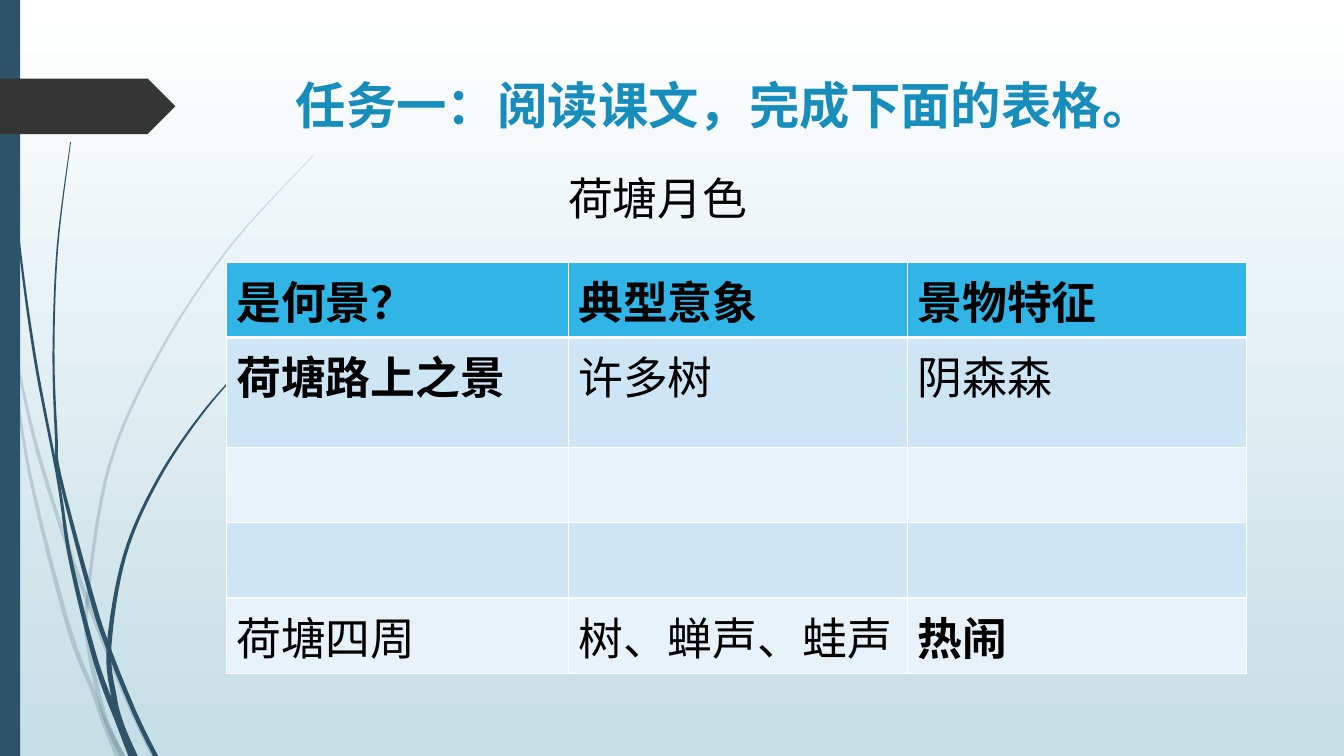
from itertools import pairwise

from lxml import etree
from pptx import Presentation
from pptx import util as u
from pptx.dml.color import RGBColor
from pptx.enum import shapes, text
from pptx.oxml import ns

FONT = "Noto Sans CJK SC"
COLOURS = {
    "white": "FFFFFF",
    "mist": "C5DEE5",
    "navy": "2E5369",
    "charcoal": "353535",
    "title": "178DBB",
    "header": "31B4E6",
    "band": "CEE5F5",
    "pale": "E8F2FA",
    "black": "000000",
}


def colour(name):
    return RGBColor.from_string(COLOURS[name])


def style(para, size, name, bold):
    font = para.font
    font.size = u.Pt(size)
    font.bold = bold
    font.color.rgb = colour(name)
    font.name = FONT
    etree.SubElement(font._element, ns.qn("a:ea"), typeface=FONT)


deck = Presentation()
deck.slide_width = u.Cm(33.87)
deck.slide_height = u.Cm(19.05)
page = deck.slides.add_slide(deck.slide_layouts[5])

backdrop = page.background.fill
backdrop.gradient()
backdrop.gradient_angle = 270
for stop, name, position in zip(backdrop.gradient_stops, ("white", "mist"), (0, 1)):
    stop.color.rgb = colour(name)
    stop.position = position

STEPS = 8
stems = [
    (20, (1, 5), [
        (0, 7.35, 0.05), (0.29, 8.89, 0.05), (0.75, 11.94, 0.08),
        (1.71, 15.75, 0.12), (2.34, 17.4, 0.12), (2.61, 18.14, 0.15),
        (3.02, 19.05, 0.25)]),
    (20, (3,), [
        (0.36, 8.76, 0.05), (0.85, 11, 0.09), (1.52, 13.23, 0.1),
        (2.22, 15.18, 0.12), (3.18, 17.6, 0.1), (3.87, 19.05, 0.13)]),
    (20, (4, 6), [
        (7.92, 3.89, 0.02), (5.8, 6.21, 0.05), (4.04, 8.85, 0.07),
        (2.76, 11.72, 0.08), (2.2, 15.14, 0.09), (2.26, 16.41, 0.12),
        (2.64, 18.06, 0.12), (3.09, 19.05, 0.15)]),
    (100, (4, 7), [
        (0.09, 0, 0.02), (0.19, 2.79, 0.03), (0.46, 5.92, 0.05),
        (0.88, 9.02, 0.07), (1.47, 12.12, 0.07), (1.78, 14.12, 0.1),
        (2.43, 16.71, 0.13), (3.05, 18.34, 0.17), (3.35, 19.05, 0.23)]),
    (100, (4, 6), [
        (1.78, 3.58, 0.02), (1.45, 6.22, 0.04), (1.35, 8.86, 0.05),
        (1.42, 11, 0.07), (1.51, 11.99, 0.08), (2.3, 15.01, 0.12),
        (2.73, 16.33, 0.12), (3.4, 17.98, 0.12), (3.92, 19.05, 0.13)]),
    (100, (4, 6), [
        (6.6, 8.74, 0.02), (5.19, 10.3, 0.06), (3.99, 12.07, 0.08),
        (3.14, 14.01, 0.09), (2.75, 16.28, 0.12), (2.87, 17.55, 0.14),
        (3.06, 18.26, 0.14), (3.4, 19.05, 0.14)]),
]
for opacity, joints, points in stems:
    ends = [points[0]] + points + [points[-1]]
    curve = [points[0]]
    for a, b, c, d in zip(ends, ends[1:], ends[2:], ends[3:]):
        for step in range(1, STEPS + 1):
            t = step / STEPS
            curve.append(tuple(
                q + t * ((r - p) + t * ((2 * p - 5 * q + 4 * r - s)
                                        + t * (3 * q - p - 3 * r + s))) / 2
                for p, q, r, s in zip(a, b, c, d)))
    for start, end in pairwise((0, *joints, len(points) - 1)):
        part = curve[start * STEPS:end * STEPS + 1]
        left = [(u.Cm(x - width / 2), u.Cm(y)) for x, y, width in part]
        right = [(u.Cm(x + width / 2), u.Cm(y)) for x, y, width in part]
        outline = left + right[::-1]
        builder = page.shapes.build_freeform(*outline[0], scale=1.0)
        builder.add_line_segments(outline[1:], close=True)
        stem = builder.convert_to_shape()
        stem.shadow.inherit = False
        stem.fill.solid()
        stem.fill.fore_color.rgb = colour("navy")
        stem.line.fill.background()
        tint = stem._element.spPr.find(".//" + ns.qn("a:srgbClr"))
        etree.SubElement(tint, ns.qn("a:alpha"), val=str(opacity * 1000))

for kind, top, width, height, name in (
    (shapes.MSO_SHAPE.RECTANGLE, 0, 0.51, 19.05, "navy"),
    (shapes.MSO_SHAPE.PENTAGON, 1.98, 4.42, 1.4, "charcoal"),
):
    block = page.shapes.add_shape(kind, 0, u.Cm(top), u.Cm(width), u.Cm(height))
    block.shadow.inherit = False
    block.fill.solid()
    block.fill.fore_color.rgb = colour(name)
    block.line.fill.background()

title = page.shapes.title
title.left, title.top = u.Cm(7.2), u.Cm(1.73)
title.width, title.height = u.Cm(24.77), u.Cm(3.56)
title.text_frame.text = "任务一：阅读课文，完成下面的表格。"
title.text_frame.vertical_anchor = text.MSO_ANCHOR.TOP
title.text_frame.paragraphs[0].alignment = text.PP_ALIGN.LEFT
style(title.text_frame.paragraphs[0], 36, "title", True)

rows = [
    ("是何景？", "典型意象", "景物特征"),
    ("荷塘路上之景", "许多树", "阴森森"),
    ("", "", ""),
    ("", "", ""),
    ("荷塘四周", "树、蝉声、蛙声", "热闹"),
]
bold_words = {*rows[0], "荷塘路上之景", "热闹"}
fills = ("header", "band", "pale", "band", "pale")
heights = (1.88, 2.78, 1.88, 1.88, 1.88)
table = page.shapes.add_table(
    len(rows), 3, u.Cm(5.7), u.Cm(6.61), u.Cm(25.72), u.Cm(sum(heights))).table
for column, width in zip(table.columns, (8.62, 8.55, 8.55)):
    column.width = u.Cm(width)
for index, words in enumerate(rows):
    table.rows[index].height = u.Cm(heights[index])
    for column, word in enumerate(words):
        cell = table.cell(index, column)
        cell.text = word
        style(cell.text_frame.paragraphs[0], 32, "black", word in bold_words)
        properties = cell._tc.get_or_add_tcPr()
        for side in "LRTB":
            thick = (index, side) in ((0, "B"), (1, "T"))
            border = etree.SubElement(properties, ns.qn("a:ln" + side),
                                      w=str(u.Pt(3 if thick else 1)))
            paint = etree.SubElement(border, ns.qn("a:solidFill"))
            etree.SubElement(paint, ns.qn("a:srgbClr"), val=COLOURS["white"])
        cell.fill.solid()
        cell.fill.fore_color.rgb = colour(fills[index])

box = page.shapes.add_textbox(u.Cm(14.07), u.Cm(4.17), u.Cm(16.94), u.Cm(1.63))
box.text_frame.word_wrap = True
box.text_frame.text = "荷塘月色"
style(box.text_frame.paragraphs[0], 32, "black", False)

deck.save("out.pptx")
